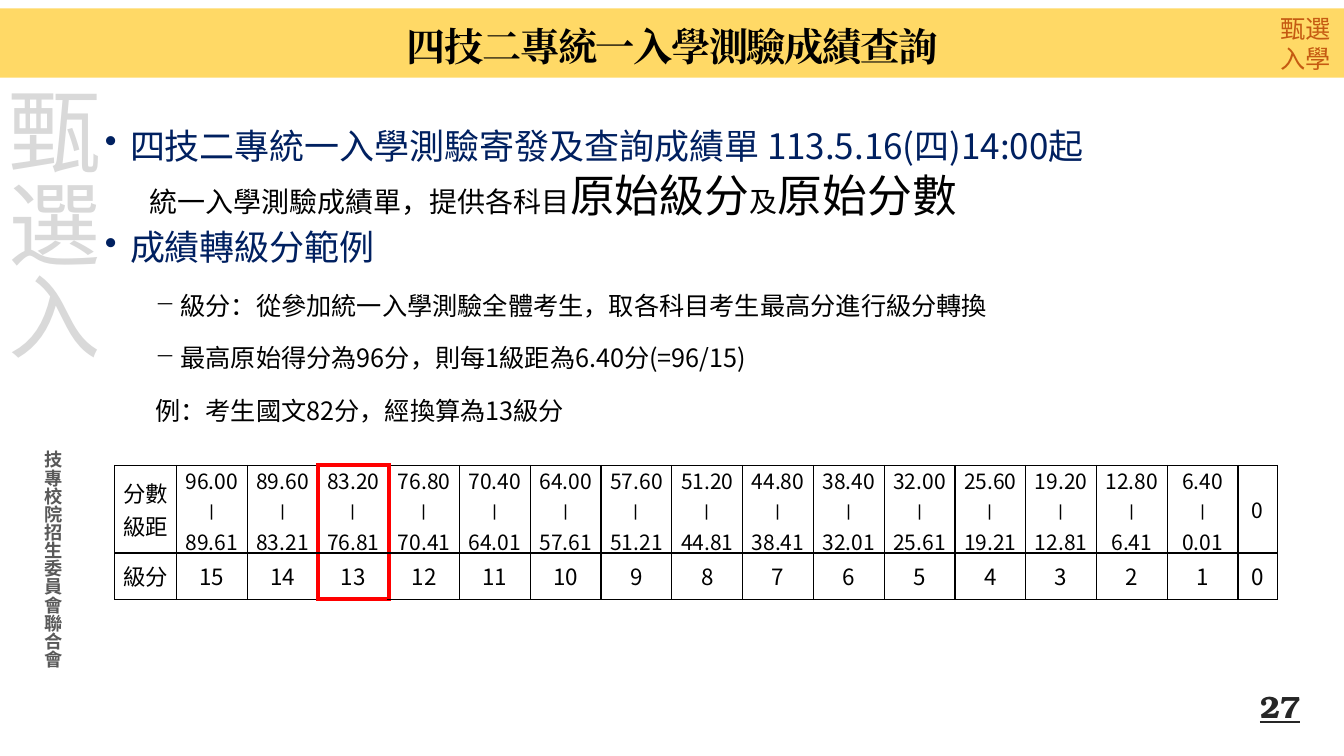
from lxml.etree import SubElement as Sub
from pptx import Presentation
from pptx.dml.color import RGBColor as RGB
from pptx.enum.shapes import MSO_SHAPE as SHAPE
from pptx.enum.text import MSO_ANCHOR as ANCHOR, PP_ALIGN as ALIGN
from pptx.oxml.ns import qn
from pptx.util import Inches, Pt

BLACK = RGB(0, 0, 0)
WHITE = RGB(0xFF, 0xFF, 0xFF)
RED = RGB(0xFF, 0, 0)
NAVY = RGB(0x00, 0x20, 0x60)
GOLD = RGB(0xFF, 0xD9, 0x66)
RUST = RGB(0xC5, 0x5A, 0x11)
PALE = RGB(0xD9, 0xD9, 0xD9)
GREY = RGB(0x59, 0x59, 0x59)
INK = RGB(0x26, 0x26, 0x26)
SANS, SANS_JP = "Noto Sans CJK SC", "Noto Sans CJK JP"


class Deck:
    """Style and current slide; lengths are cells of a 160 x 90 grid."""

    COLS, ROWS = 160, 90

    def __init__(self):
        self.prs = Presentation()
        self.prs.slide_width, self.prs.slide_height = Inches(13.33), Inches(7.5)
        self.s = self.prs.slides.add_slide(self.prs.slide_layouts[6])

    def x(self, cols):
        return int(self.prs.slide_width * cols / self.COLS)

    def y(self, rows):
        return int(self.prs.slide_height * rows / self.ROWS)

    def area(self, left, top, width, height):
        return self.x(left), self.y(top), self.x(width), self.y(height)

    def run(self, p, text, color=BLACK, font=SANS, spacing=None, **fmt):
        r = p.add_run()
        r.text = text
        r.font.color.rgb = color
        for key, value in dict(fmt, name=font).items():
            setattr(r.font, key, value)
        rPr = r.font._element
        Sub(rPr, qn("a:ea")).set("typeface", font)
        if spacing is not None:
            rPr.set("spc", str(spacing))

    def bar(self, area, color):
        sp = self.s.shapes.add_shape(SHAPE.RECTANGLE, *self.area(*area))
        sp.shadow.inherit = False
        sp.fill.solid()
        sp.fill.fore_color.rgb = color
        sp.line.fill.background()

    def box(self, area, anchor=ANCHOR.TOP, wrap=True, vertical=False):
        tf = self.s.shapes.add_textbox(*self.area(*area)).text_frame
        tf.word_wrap, tf.vertical_anchor = wrap, anchor
        if vertical:
            tf._txBody.bodyPr.set("vert", "eaVert")
        return tf

    def label(self, area, lines, align=ALIGN.LEFT, anchor=ANCHOR.TOP,
              wrap=True, vertical=False, **fmt):
        self.lines(self.box(area, anchor, wrap, vertical), lines, align, **fmt)

    def lines(self, tf, lines, align, **fmt):
        for i, text in enumerate(lines):
            p = tf.add_paragraph() if i else tf.paragraphs[0]
            p.alignment = align
            self.run(p, text, **fmt)

    def body(self, area, items):
        tf = self.box(area)
        for i, (margin, indent, bullet, fmt, runs) in enumerate(items):
            p = tf.add_paragraph() if i else tf.paragraphs[0]
            pPr = p._p.get_or_add_pPr()
            pPr.set("marL", str(Inches(margin)))
            pPr.set("indent", str(Inches(indent)))
            if bullet:
                Sub(pPr, qn("a:buChar")).set("char", bullet)
            for key, value in fmt.items():
                setattr(p, key, value)
            for text, size, color in runs:
                self.run(p, text, color, size=Pt(size))

    def table(self, left, top, widths, heights, rows, sizes, marked):
        area = self.area(left, top, sum(widths), sum(heights))
        frame = self.s.shapes.add_table(len(heights), len(widths), *area)
        tbl = frame.table
        for col, width in zip(tbl.columns, widths):
            col.width = self.x(width)
        for row, height in zip(tbl.rows, heights):
            row.height = self.y(height)
        for i, row in enumerate(rows):
            for j, lines in enumerate(row):
                cell = tbl.cell(i, j)
                cell.fill.solid()
                cell.fill.fore_color.rgb = WHITE
                style = dict(margin_left=Inches(0.02), margin_right=Inches(0.02),
                             margin_top=0, margin_bottom=0,
                             vertical_anchor=ANCHOR.MIDDLE)
                for key, value in style.items():
                    setattr(cell, key, value)
                size = sizes[i] if j else sizes[-1]
                self.lines(cell.text_frame, lines, ALIGN.CENTER, size=Pt(size))
                self.borders(cell, {
                    "L": j in (marked, marked + 1),
                    "R": j in (marked - 1, marked),
                    "T": j == marked and i == 0,
                    "B": j == marked and i == len(rows) - 1})

    def borders(self, cell, sides):
        tcPr = cell._tc.get_or_add_tcPr()
        for n, (side, strong) in enumerate(sides.items()):
            ln = Sub(tcPr, qn("a:ln" + side))
            ln.set("w", str(Pt(3 if strong else 1)))
            color = Sub(Sub(ln, qn("a:solidFill")), qn("a:srgbClr"))
            color.set("val", str(RED if strong else BLACK))
            tcPr.insert(n, ln)


def main():
    d = Deck()

    # Header band and side lettering
    d.bar((0, 1, 160, 8.25), GOLD)
    d.label((3.25, 52.5, 5, 30.75), ["技專校院招生委員會聯合會"], ALIGN.CENTER,
            vertical=True, size=Pt(13), font=SANS_JP, color=GREY, bold=True)
    d.label((-2.4, 9, 15.7, 45.25), ["甄選入"], vertical=True,
            size=Pt(66), color=PALE)
    d.label((151.2, 1, 8.5, 8.5), ["甄選", "入學"], ALIGN.CENTER, wrap=False,
            size=Pt(18), font=SANS_JP, color=RUST)

    # Body text
    def spaced(line, before):
        return dict(line_spacing=line, space_before=Pt(before))

    d.body((11.3, 14.75, 144.6, 65.2), [
        (0.25, -0.25, "•", spaced(0.9, 0),
         [("四技二專統一入學測驗寄發及查詢成績單 113.5.16(四)14:00起", 25, NAVY)]),
        (0.44, 0, None, spaced(0.9, 5),
         [("統一入學測驗成績單，提供各科目", 20, BLACK), ("原始級分", 32, BLACK),
          ("及", 20, BLACK), ("原始分數", 32, BLACK)]),
        (0.25, -0.25, "•", spaced(0.9, 6), [("成績轉級分範例", 25, NAVY)]),
        (0.75, -0.25, "−", spaced(1.5, 5),
         [("級分：從參加統一入學測驗全體考生，取各科目考生最高分進行級分轉換", 18, BLACK)]),
        (0.75, -0.25, "−", spaced(1.5, 5),
         [("最高原始得分為96分，則每1級距為6.40分(=96/15)", 18, BLACK)]),
        (0.5, 0, None, spaced(1.5, 5),
         [("例：考生國文82分，經換算為13級分", 18, BLACK)]),
    ])

    # Score ranges for grades 15 down to 1, then 0
    top_grade, step = 15, 96 / 15
    grades = range(top_grade, 0, -1)
    ranges = [[f"{g * step:.2f}", "∣", f"{(g - 1) * step + 0.01:.2f}"]
              for g in grades]
    d.table(13.65, 55.4, [7.35] + [8.43] * top_grade + [4.65], [10.45, 5.5],
            [[["分數級距"]] + ranges + [["0"]],
             [["級分"]] + [[str(g)] for g in grades] + [["0"]]],
            sizes=(15, 16), marked=1 + top_grade - 13)

    # Title and page number
    d.label((0, 1.3, 160, 8.3), ["四技二專統一入學測驗成績查詢"], ALIGN.CENTER,
            ANCHOR.MIDDLE, size=Pt(28), font="Cambria", bold=True, spacing=-100)
    d.label((120, 81.7, 36, 4.8), ["27"], ALIGN.RIGHT, ANCHOR.MIDDLE, size=Pt(22),
            font="TeX Gyre Bonum", color=INK, bold=True, underline=True)

    d.prs.save("out.pptx")


if __name__ == "__main__":
    main()
